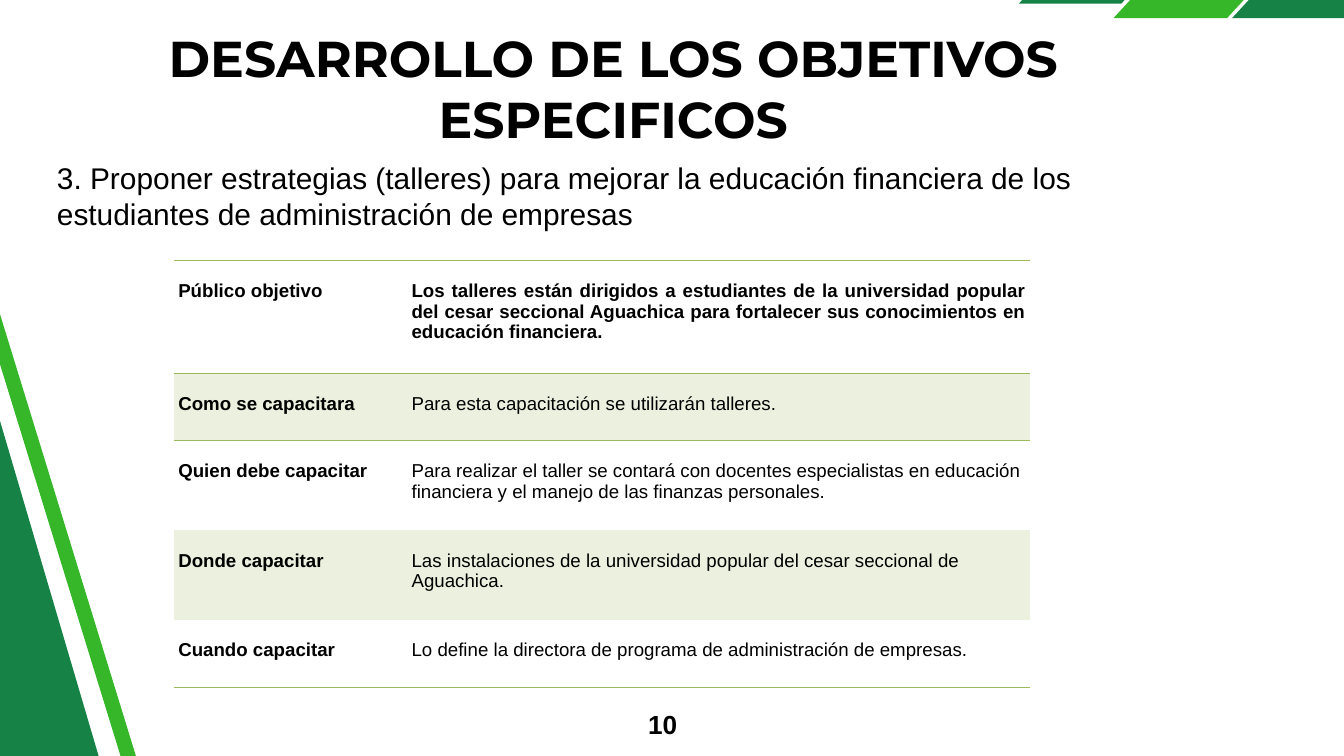
from lxml.etree import SubElement
from pptx import Presentation
from pptx.dml.color import RGBColor
from pptx.enum.shapes import MSO_SHAPE
from pptx.enum.text import MSO_ANCHOR, MSO_AUTO_SIZE, PP_ALIGN
from pptx.oxml.ns import qn
from pptx.util import Pt

DARK, LIGHT, BAND, RULE = "168246", "35B729", "EBF1DE", "9BBB59"
PLAIN = "{2D5ABB26-0587-4C30-8999-92F81FD0307C}"
LEFT, MID, RIGHT, JUST = (PP_ALIGN.LEFT, PP_ALIGN.CENTER,
                          PP_ALIGN.RIGHT, PP_ALIGN.JUSTIFY)

# label, text, text alignment, row height
ROWS = [
    ("Público objetivo",
     "Los talleres están dirigidos a estudiantes de la universidad popular "
     "del cesar seccional Aguachica para fortalecer sus conocimientos en "
     "educación financiera.", JUST, 120.5),
    ("Como se capacitara",
     "Para esta capacitación se utilizarán talleres.", JUST, 72),
    ("Quien debe capacitar",
     "Para realizar el taller se contará con docentes especialistas en "
     "educación financiera y el manejo de las finanzas personales.",
     LEFT, 96),
    ("Donde capacitar",
     "Las instalaciones de la universidad popular del cesar seccional de "
     "Aguachica.", LEFT, 96),
    ("Cuando capacitar",
     "Lo define la directora de programa de administración de empresas.",
     LEFT, 73),
]


def color(code):
    return RGBColor.from_string(code)


def place(shape, box):
    for name, value in zip(("left", "top", "width", "height"), box):
        setattr(shape, name, Pt(value))


def write(frame, text, size, align, bold=False, face="Arial", pitch=None):
    frame.text = text
    para = frame.paragraphs[0]
    para.alignment = align
    para.space_before = Pt(0)
    if pitch:
        para.line_spacing = Pt(pitch)
    font = para.runs[0].font
    for name, value in dict(size=Pt(size), bold=bold, name=face).items():
        setattr(font, name, value)
    font.color.rgb = color("000000")


def set_frame(frame):
    looks = dict(margin_left=0, margin_top=0, margin_right=0,
                 margin_bottom=0, word_wrap=True,
                 auto_size=MSO_AUTO_SIZE.NONE,
                 vertical_anchor=MSO_ANCHOR.TOP)
    for name, value in looks.items():
        setattr(frame, name, value)


def add_text(slide, box, *args, **looks):
    shape = slide.shapes.add_textbox(*map(Pt, box))
    set_frame(shape.text_frame)
    write(shape.text_frame, *args, **looks)


def add_block(slide, kind, box, fill, turn=0):
    shape = slide.shapes.add_shape(kind, *map(Pt, box))
    shape.shadow.inherit = False
    shape.fill.solid()
    shape.fill.fore_color.rgb = color(fill)
    shape.line.fill.background()
    shape.rotation = turn
    return shape


def add_art(slide):
    for box, fill in [((1091.5, -62, 170.5, 66), DARK),
                      ((1193, -76.5, 210, 96), LIGHT),
                      ((1320, -76.5, 210, 96), DARK)]:
        slant = add_block(slide, MSO_SHAPE.PARALLELOGRAM, box, fill)
        slant.adjustments[0] = 0.92
    for box, fill, turn in [((-726.5, 448.5, 1181.5, 361), DARK, 253.6),
                            ((-509.8, 618.5, 1181.5, 15.8), LIGHT, 252.9)]:
        add_block(slide, MSO_SHAPE.RECTANGLE, box, fill, turn)


def add_rule(cell, side):
    """Draw one cell border; call before the cell gets its fill."""
    line = SubElement(cell._tc.get_or_add_tcPr(), qn("a:" + side),
                      w=str(Pt(1)))
    fill = SubElement(line, qn("a:solidFill"))
    SubElement(fill, qn("a:srgbClr"), val=RULE)


def fill_cell(cell, text, align, bold, sides, band):
    edges = dict(margin_left=5, margin_right=5, margin_top=22,
                 margin_bottom=0)
    for name, value in edges.items():
        setattr(cell, name, Pt(value))
    write(cell.text_frame, text, 20, align, bold, pitch=22)
    for side in sides:
        add_rule(cell, side)
    if band:
        cell.fill.solid()
        cell.fill.fore_color.rgb = color(BAND)
    else:
        cell.fill.background()


def add_grid(slide):
    tall = sum(row[-1] for row in ROWS)
    frame = slide.shapes.add_table(len(ROWS), 2, Pt(186), Pt(279.4),
                                   Pt(918), Pt(tall))
    table = frame.table
    table.horz_banding = False
    table._tbl.tblPr.find(qn("a:tableStyleId")).text = PLAIN
    for col, wide in zip(table.columns, (250, 668)):
        col.width = Pt(wide)
    rules = {0: ("lnT", "lnB"), 1: ("lnT",), len(ROWS) - 1: ("lnB",)}
    for i, (label, text, align, high) in enumerate(ROWS):
        table.rows[i].height = Pt(high)
        sides, band = rules.get(i, ()), i % 2 == 1
        fill_cell(table.cell(i, 0), label, LEFT, True, sides, band)
        fill_cell(table.cell(i, 1), text, align, i == 0, sides, band)


def main():
    deck = Presentation()
    deck.slide_width, deck.slide_height = Pt(1440), Pt(810)
    slide = deck.slides.add_slide(deck.slide_layouts[5])
    add_art(slide)
    title = slide.shapes.title
    place(title, (156, 29.5, 1002, 131))
    set_frame(title.text_frame)
    write(title.text_frame, "DESARROLLO DE LOS OBJETIVOS ESPECIFICOS",
          54, MID, True, "Montserrat")
    add_text(slide, (685.5, 759, 40, 36), "10", 28, RIGHT, bold=True)
    add_text(slide, (61, 171.4, 1240, 78),
             "3. Proponer estrategias (talleres) para mejorar la educación "
             "financiera de los estudiantes de administración de empresas",
             32, LEFT, pitch=38.5)
    add_grid(slide)
    deck.save("out.pptx")


if __name__ == "__main__":
    main()
